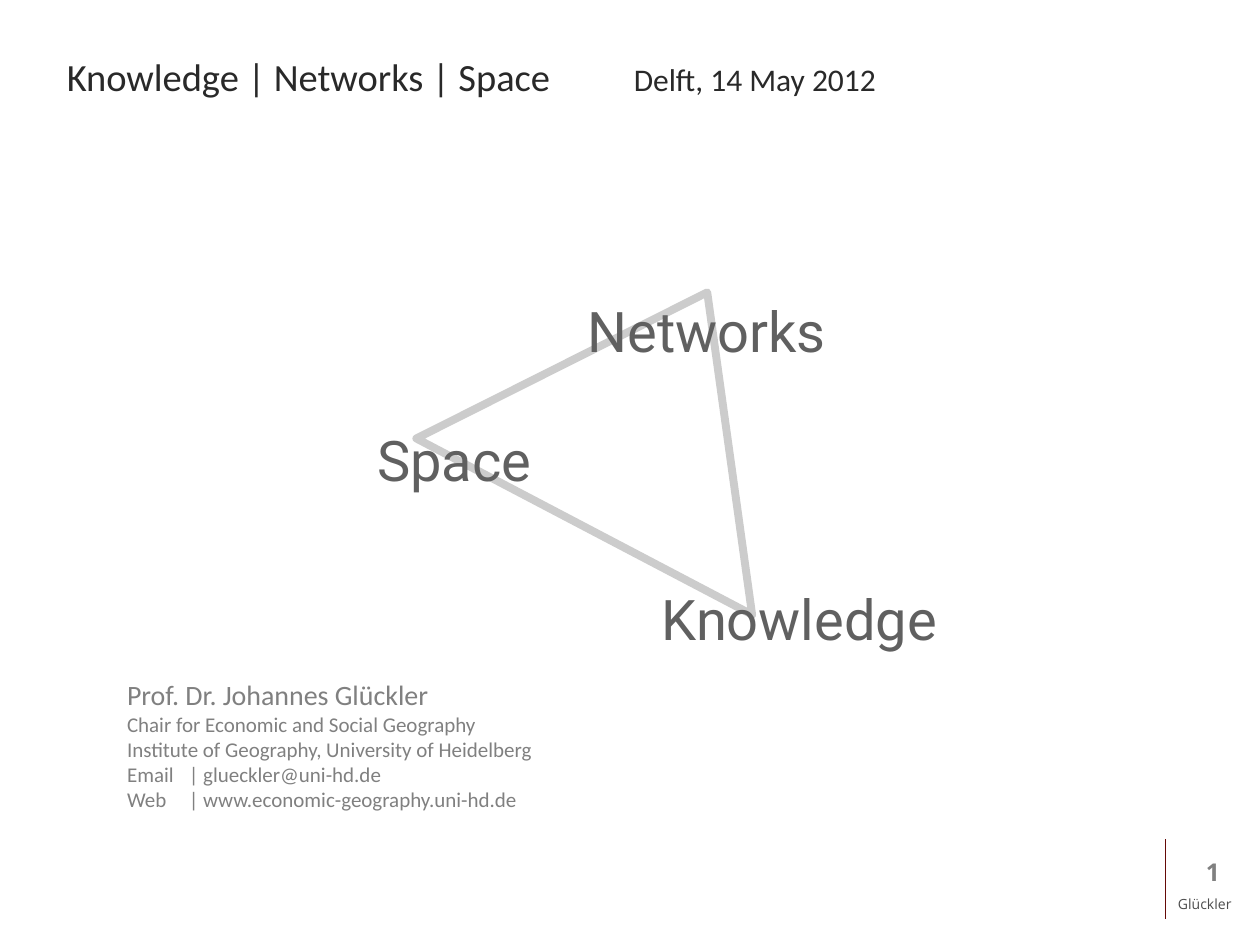
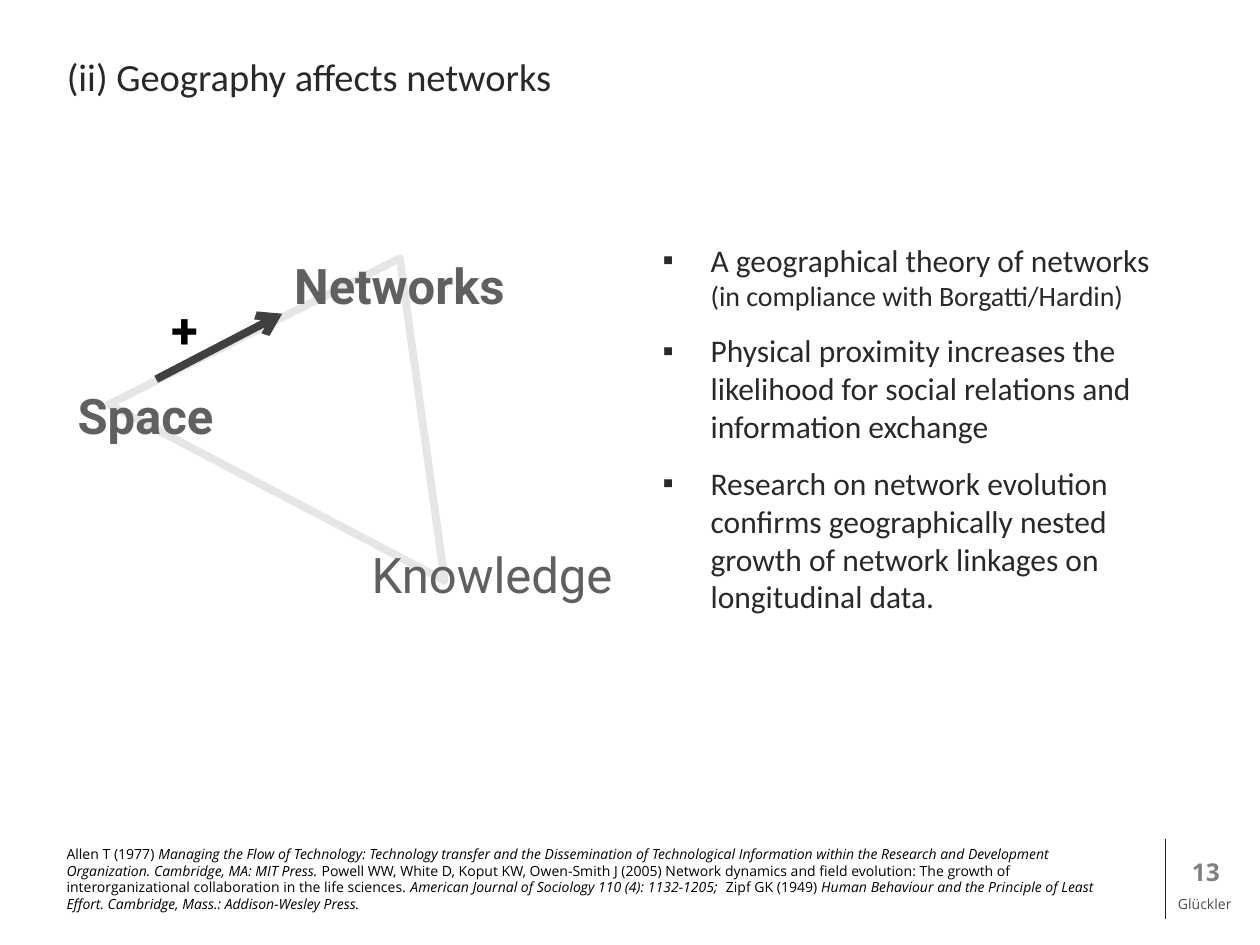
from lxml import etree
from pptx import Presentation
from pptx.dml.color import RGBColor
from pptx.enum.shapes import MSO_CONNECTOR, MSO_SHAPE
from pptx.enum.text import MSO_ANCHOR, MSO_AUTO_SIZE, PP_ALIGN
from pptx.oxml.ns import qn
from pptx.util import Inches, Pt

TRIANGLE = MSO_SHAPE.ISOSCELES_TRIANGLE
STRAIGHT = MSO_CONNECTOR.STRAIGHT
MIDDLE, NO_FIT = MSO_ANCHOR.MIDDLE, MSO_AUTO_SIZE.NONE
LEFT, CENTER, RIGHT = PP_ALIGN.LEFT, PP_ALIGN.CENTER, PP_ALIGN.RIGHT

INK = RGBColor(0x29, 0x29, 0x29)
BLACK = RGBColor(0, 0, 0)
MUTED = RGBColor(0x80, 0x80, 0x80)
AUTHOR = RGBColor(0x4D, 0x4D, 0x4D)
LABEL = RGBColor(0x60, 0x60, 0x60)
ARROW = RGBColor(0x40, 0x40, 0x40)
MAROON = RGBColor(0x65, 0x09, 0x07)

TITLE = {"name": "Calibri", "size": Pt(22), "color": INK}
BODY = {"name": "Calibri", "size": Pt(18), "color": INK}
CONTACT = {"name": "Calibri", "size": Pt(12), "color": MUTED}
NODE = {"name": "Roboto", "size": Pt(28), "color": LABEL}
PLUS = {"name": "Roboto", "size": Pt(28), "color": BLACK, "bold": True}
NUMBER = {"name": "Open Sans", "size": Pt(14), "color": MUTED, "bold": True}
FOOTER = {"name": "Open Sans", "size": Pt(8), "color": AUTHOR}
SOURCE = {"name": "Open Sans", "size": Pt(8), "color": BLACK}


def add_run(p, text, fmt):
    r = p.add_run()
    r.text = text
    for key, value in fmt.items():
        if key == "color":
            r.font.color.rgb = value
        else:
            setattr(r.font, key, value)


def add_text(s, box, text, fmt, align=LEFT, wrap=True):
    tf = s.shapes.add_textbox(*map(Inches, box)).text_frame
    tf.word_wrap = wrap
    p = tf.paragraphs[0]
    p.alignment = align
    if text:
        add_run(p, text, fmt)
    return tf


prs = Presentation()
prs.slide_width, prs.slide_height = Inches(10), Inches(7.5)
opening = prs.slides.add_slide(prs.slide_layouts[5])
theory = prs.slides.add_slide(prs.slide_layouts[1])

# Shared parts: title, footer and the triangle of concepts
slides = [
    (opening, "1", [("Knowledge | Networks | Space\t\t", 22), ("Delft, 14 May 2012", 18)],
     (3.62, 2.2), RGBColor(0xCC, 0xCC, 0xCC), 32,
     [("Knowledge", 4.86, 4.59, 2.97, False),
      ("Space", 2.64, 3.33, 1.93, False),
      ("Networks", 4.23, 2.3, 2.76, False)]),
    (theory, "13", [("(ii) Geography affects networks", 22)],
     (1.18, 1.93), RGBColor(0xE6, 0xE6, 0xE6), 28,
     [("Knowledge", 2.42, 4.27, 2.97, False),
      ("Space", 0.19, 3.01, 1.93, True),
      ("Networks", 1.79, 1.98, 2.76, True)]),
]
for s, number, title_runs, corner, line_color, size, nodes in slides:
    sp = s.shapes.title
    sp.left, sp.top, sp.width, sp.height = map(Inches, (0.43, 0.13, 7.32, 0.95))
    tf = sp.text_frame
    tf.auto_size, tf.vertical_anchor, tf.word_wrap = NO_FIT, MIDDLE, True
    tf.paragraphs[0].alignment = LEFT
    for text, points in title_runs:
        add_run(tf.paragraphs[0], text, {**TITLE, "size": Pt(points)})

    rule = s.shapes.add_connector(STRAIGHT, *map(Inches, (9.25, 6.66, 9.25, 7.29)))
    rule.line.color.rgb, rule.line.width = MAROON, Pt(1)
    etree.SubElement(rule._element.spPr, qn("a:effectLst"))
    add_text(s, (9.25, 7.06, 0.65, 0.24), "Glückler", FOOTER, wrap=False)
    add_text(s, (9.17, 6.75, 0.61, 0.33), number, NUMBER, RIGHT)

    sp = s.shapes.add_shape(TRIANGLE, *map(Inches, (*corner, 3.01, 2.1)))
    sp.rotation = 27.7
    sp.shadow.inherit = False
    sp.fill.background()
    sp.line.color.rgb, sp.line.width = line_color, Pt(4.5)
    for text, left, top, width, bold in nodes:
        add_text(s, (left, top, width, 0.58), text,
                 {**NODE, "size": Pt(size), "bold": bold}, CENTER)

# Opening slide: contact details
tf = add_text(opening, (0.91, 5.33, 3.45, 1.18), "Prof. Dr. Johannes Glückler",
              {**CONTACT, "size": Pt(16)}, wrap=False)
for text in ("Chair for Economic and Social Geography",
             "Institute of Geography, University of Heidelberg",
             "Email \t| glueckler@uni-hd.de",
             "Web \t| www.economic-geography.uni-hd.de"):
    p = tf.add_paragraph()
    if "\t" in text:
        tabs = etree.SubElement(p._p.get_or_add_pPr(), qn("a:tabLst"))
        etree.SubElement(tabs, qn("a:tab"), pos=str(Inches(0.49)), algn="l")
    add_run(p, text, CONTACT)

# Theory slide: bullet list
sp = theory.placeholders[1]
sp.left, sp.top, sp.width, sp.height = map(Inches, (5.16, 1.86, 4.17, 4.57))
tf = sp.text_frame
tf.auto_size, tf.word_wrap = NO_FIT, True
bullets = [
    [("A geographical theory of networks ", 18), ("(in compliance with Borgatti/Hardin)", 16)],
    [("Physical proximity increases the likelihood for social relations and "
      "information exchange", 18)],
    [("Research on network evolution confirms geographically nested growth of "
      "network linkages on longitudinal data.", 18)],
]
for i, runs in enumerate(bullets):
    p = tf.add_paragraph() if i else tf.paragraphs[0]
    pPr = p._p.get_or_add_pPr()
    pPr.set("marL", str(Inches(0.38)))
    pPr.set("indent", str(-Inches(0.38)))
    etree.SubElement(pPr, qn("a:buChar"), char="▪")
    p.space_before, p.space_after = Pt(7 if i else 0), Pt(4)
    for text, points in runs:
        add_run(p, text, {**BODY, "size": Pt(points)})

# Theory slide: positive effect of space on networks
arrow = theory.shapes.add_connector(STRAIGHT, *map(Inches, (1.24, 3.01, 2.24, 2.49)))
arrow.line.color.rgb, arrow.line.width = ARROW, Pt(4.5)
etree.SubElement(arrow.line._get_or_add_ln(), qn("a:tailEnd"), type="arrow")
etree.SubElement(arrow._element.spPr, qn("a:effectLst"))
add_text(theory, (1.26, 2.33, 0.43, 0.57), "+", PLUS, wrap=False)

# Theory slide: references, with works in italics
tf = add_text(theory, (0.43, 6.66, 8.66, 0.64), "", SOURCE)
references = [
    ("Allen T (1977) ",
     "Managing the Flow of Technology: Technology transfer and the Dissemination of "
     "Technological Information within the Research and Development Organization. "
     "Cambridge, MA: MIT Press. "),
    ("Powell WW, White D, Koput KW, Owen-Smith J (2005) Network dynamics and field "
     "evolution: The growth of interorganizational collaboration in the life sciences. ",
     "American Journal of Sociology 110 (4): 1132-1205;  "),
    ("Zipf GK (1949) ",
     "Human Behaviour and the Principle of Least Effort. Cambridge, Mass.: "
     "Addison-Wesley Press."),
]
for plain, italic in references:
    add_run(tf.paragraphs[0], plain, SOURCE)
    add_run(tf.paragraphs[0], italic, {**SOURCE, "italic": True})

prs.save("out.pptx")
